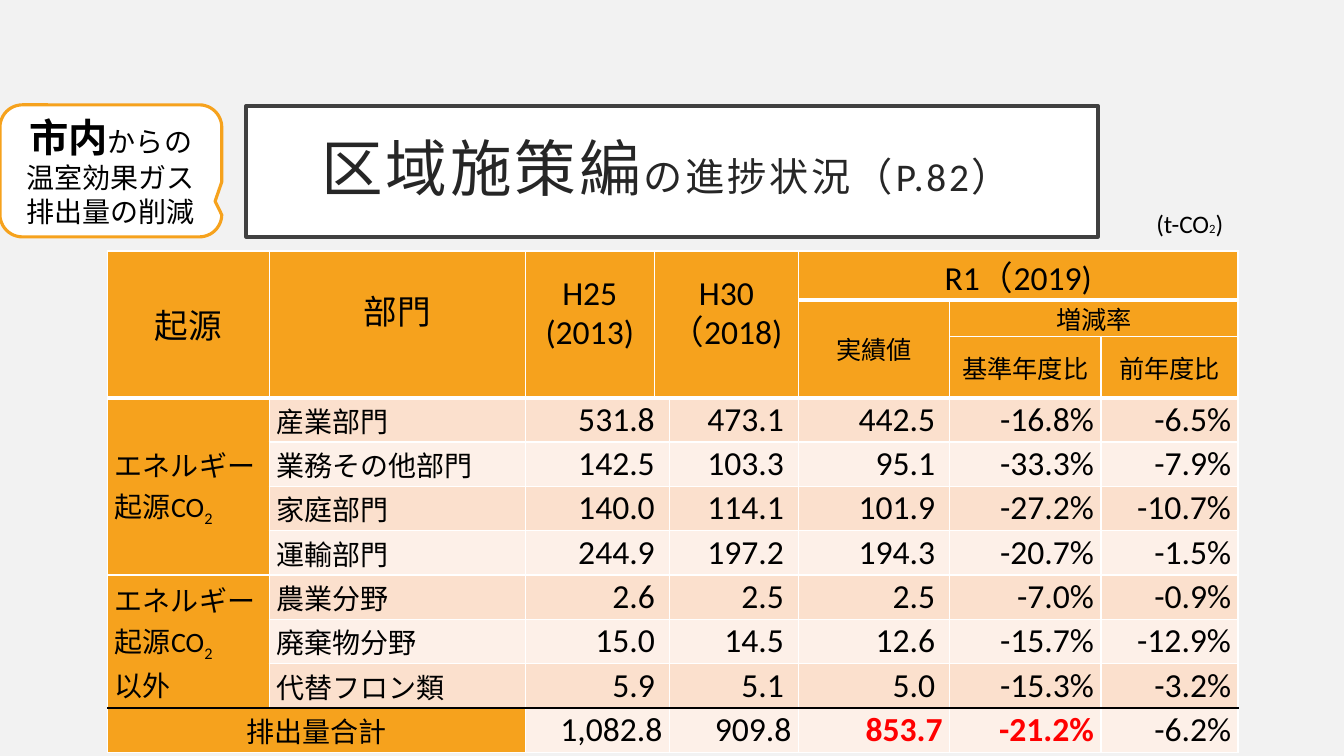
from lxml.etree import SubElement
from pptx import Presentation
from pptx.dml.color import RGBColor
from pptx.enum.shapes import MSO_SHAPE
from pptx.enum.text import MSO_ANCHOR, PP_ALIGN
from pptx.oxml.ns import qn
from pptx.util import Pt

SCALE = 9144  # one px is a hundredth of an inch
ORANGE, WHITE, BLACK, RED = "F6A21D", "FFFFFF", "000000", "FF0000"
BANDS = ["FBE0CD", "FDF0E8"]
LEFT, MID, RIGHT = PP_ALIGN.LEFT, PP_ALIGN.CENTER, PP_ALIGN.RIGHT

COLS = [160, 254, 128, 15, 128, 150, 150, 136]
ROWS = [36, 36, 61] + [44] * 8
SPOTS = [2, 4, 5, 6, 7]  # columns that hold figures
# First row, first column, last row, last column
SPANS = [(0, 0, 2, 0), (0, 1, 2, 1), (0, 2, 2, 2), (0, 3, 2, 4), (0, 5, 0, 7),
         (1, 5, 2, 5), (1, 6, 1, 7), (3, 0, 6, 0), (7, 0, 9, 0), (10, 0, 10, 1)]
# Row, column, size, line pitch, lines
HEADS = [(0, 0, 24, None, ["起源"]), (0, 1, 24, 14, ["部門"]),
         (0, 2, 24, 14, ["H25", "(2013)"]), (0, 3, 24, 14, ["H30", "（2018)"]),
         (0, 5, 24, None, ["R1（2019)"]), (1, 5, 18, None, ["実績値"]),
         (1, 6, 18, None, ["増減率"]), (2, 6, 18, None, ["基準年度比"]),
         (2, 7, 18, None, ["前年度比"])]
DATA = [
    ("産業部門", "531.8 ", "473.1 ", "442.5 ", "-16.8%", "-6.5%"),
    ("業務その他部門", "142.5 ", "103.3 ", "95.1 ", "-33.3%", "-7.9%"),
    ("家庭部門", "140.0 ", "114.1 ", "101.9 ", "-27.2%", "-10.7%"),
    ("運輸部門", "244.9 ", "197.2 ", "194.3 ", "-20.7%", "-1.5%"),
    ("農業分野", "2.6 ", "2.5 ", "2.5 ", "-7.0%", "-0.9%"),
    ("廃棄物分野", "15.0 ", "14.5 ", "12.6 ", "-15.7%", "-12.9%"),
    ("代替フロン類", "5.9 ", "5.1 ", "5.0 ", "-15.3%", "-3.2%"),
]
TOTAL = ["1,082.8", "909.8", "853.7", "-21.2%", "-6.2%"]


def px(*nums):
    return [num * SCALE for num in nums]


def paint(target, tone):
    """Set a fill or a font colour from a hex string."""
    if hasattr(target, "solid"):
        target.solid()
        target.fore_color.rgb = RGBColor.from_string(tone)
    else:
        target.rgb = RGBColor.from_string(tone)


def add_run(para, text, size, tone=BLACK, bold=False, **marks):
    run = para.add_run()
    run.text = text
    run.font.name = "Calibri"
    run.font.size = Pt(size)
    run.font.bold = bold
    paint(run.font.color, tone)
    for name, value in marks.items():
        run._r.get_or_add_rPr().set(name, str(value))


def add_para(frame, align, first=False):
    para = frame.paragraphs[0] if first else frame.add_paragraph()
    para.alignment = align
    return para


def add_box(slide, kind, place, edge, width):
    box = slide.shapes.add_shape(kind, *px(*place))
    box.shadow.inherit = False
    paint(box.fill, WHITE)
    paint(box.line.fill, edge)
    box.line.width = Pt(width)
    box.text_frame.word_wrap = True
    box.text_frame.vertical_anchor = MSO_ANCHOR.MIDDLE
    return box


def add_title(slide):
    box = add_box(slide, MSO_SHAPE.RECTANGLE, (244, 105, 845, 130), "404040", 2.5)
    frame = box.text_frame
    frame.margin_left, frame.margin_right = px(20, 20)
    frame.margin_top, frame.margin_bottom = px(20, 20)
    para = add_para(frame, MID, True)
    para.line_spacing = 0.9
    add_run(para, "区域施策編", 44, "262626", spc=200)
    add_run(para, "の進捗状況（P.82） ", 28, "262626", spc=200)


def add_callout(slide):
    kind = MSO_SHAPE.ROUNDED_RECTANGULAR_CALLOUT
    box = add_box(slide, kind, (0, 104, 220, 131), ORANGE, 2.25)
    for spot, value in enumerate([0.47, 0.23, 0.17]):
        box.adjustments[spot] = value
    para = add_para(box.text_frame, MID, True)
    add_run(para, "市内", 28, bold=True)
    add_run(para, "からの", 20)
    add_run(add_para(box.text_frame, MID), "温室効果ガス排出量の削減", 20)


def add_unit(slide):
    frame = slide.shapes.add_textbox(*px(1137, 202, 127, 40)).text_frame
    frame.word_wrap = True
    para = add_para(frame, LEFT, True)
    for text, size in [("(t-CO", 18), ("2", 9), (")", 18)]:
        add_run(para, text, size)


def add_edge(cell, side, width, tone):
    line = SubElement(cell._tc.get_or_add_tcPr(), qn("a:ln" + side), w=str(Pt(width)))
    fill = SubElement(line, qn("a:solidFill"))
    SubElement(fill, qn("a:srgbClr"), val=tone)


def rule(row):
    """Width and colour of the rule above a row."""
    return {1: (3, WHITE), 3: (3, WHITE), 10: (1, BLACK)}.get(row, (1, WHITE))


def style(cell, row, col):
    tall = cell.span_height if cell.is_merge_origin else 1
    add_edge(cell, "L", 1, WHITE)
    add_edge(cell, "R", 1, WHITE)
    add_edge(cell, "T", *rule(row))
    add_edge(cell, "B", *rule(row + tall))
    head = row < 3 or col == 0 or (row == 10 and col == 1)
    paint(cell.fill, ORANGE if head else BANDS[(row - 3) % 2])
    cell.vertical_anchor = MSO_ANCHOR.MIDDLE
    cell.margin_left, cell.margin_right = px(7, 7)
    cell.margin_top = cell.margin_bottom = 0


def write(cell, text, size, align, tone=BLACK, bold=False):
    add_run(add_para(cell.text_frame, align, True), text, size, tone, bold)


def fill_heads(grid):
    for row, col, size, pitch, lines in HEADS:
        frame = grid.cell(row, col).text_frame
        for spot, text in enumerate(lines):
            para = add_para(frame, MID, spot == 0)
            if pitch:
                para.line_spacing = Pt(pitch)
                para.space_before = Pt(pitch if spot else 0)
            add_run(para, text, size)


def fill_body(grid):
    # Sources
    for row in (3, 7):
        para = add_para(grid.cell(row, 0).text_frame, LEFT, True)
        add_run(para, "エネルギー起源CO", 20)
        add_run(para, "2", 20, baseline=-25000)
    add_run(add_para(grid.cell(7, 0).text_frame, LEFT), "以外", 20)
    # Sectors and their figures
    for row, (name, *nums) in enumerate(DATA, 3):
        write(grid.cell(row, 1), name, 20, PP_ALIGN.JUSTIFY)
        for col, num in zip(SPOTS, nums):
            write(grid.cell(row, col), num, 24, RIGHT)
    # Total
    write(grid.cell(10, 0), "排出量合計", 20, MID)
    for col, num in zip(SPOTS, TOTAL):
        key = col in (5, 6)
        write(grid.cell(10, col), num, 24, RIGHT, RED if key else BLACK, key)


def add_grid(slide):
    place = px(107, 249, sum(COLS), sum(ROWS))
    grid = slide.shapes.add_table(len(ROWS), len(COLS), *place).table
    grid.first_row = grid.horz_banding = False
    for col, wide in zip(grid.columns, COLS):
        col.width = wide * SCALE
    for row, tall in zip(grid.rows, ROWS):
        row.height = tall * SCALE
    for top, left, end, last in SPANS + [(row, 2, row, 3) for row in range(3, 11)]:
        grid.cell(top, left).merge(grid.cell(end, last))
    for row in range(len(ROWS)):
        for col in range(len(COLS)):
            style(grid.cell(row, col), row, col)
    fill_heads(grid)
    fill_body(grid)


def main():
    deck = Presentation()
    deck.slide_width, deck.slide_height = px(1333, 750)
    slide = deck.slides.add_slide(deck.slide_layouts[6])
    paint(slide.background.fill, "F2F2F2")
    add_title(slide)
    add_grid(slide)
    add_callout(slide)
    add_unit(slide)
    deck.save("out.pptx")


if __name__ == "__main__":
    main()
